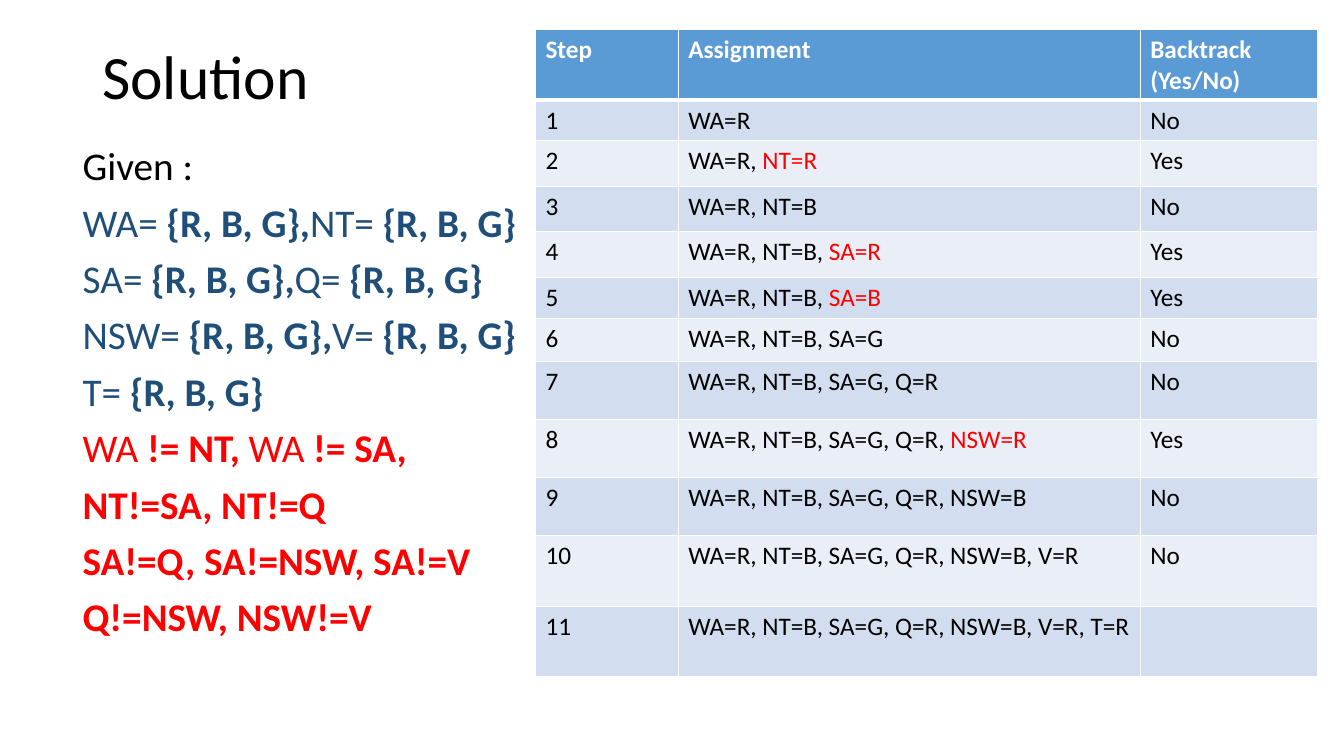
"""Build a slide that solves a map colouring problem by backtracking."""
from lxml import etree
from pptx import Presentation
from pptx.dml.color import RGBColor
from pptx.enum import text as t
from pptx.oxml import ns
from pptx.util import Pt

BLACK = RGBColor(0x00, 0x00, 0x00)
WHITE = RGBColor(0xFF, 0xFF, 0xFF)
RED = RGBColor(0xFF, 0x00, 0x00)
NAVY = RGBColor(0x1F, 0x4E, 0x79)
HEADER_BLUE = RGBColor(0x5B, 0x9B, 0xD5)
BAND_DARK = RGBColor(0xD2, 0xDE, 0xEF)
BAND_LIGHT = RGBColor(0xEA, 0xEF, 0xF7)

DOMAINS = [
    "WA= *{R, B, G},*NT= *{R, B, G}",
    "SA= *{R, B, G},*Q= *{R, B, G}",
    "NSW= *{R, B, G},*V= *{R, B, G}",
    "T= *{R, B, G}",
]
CONSTRAINTS = [
    "WA* != NT, *WA* != SA,",
    "*NT!=SA, NT!=Q",
    "*SA!=Q, SA!=NSW, SA!=V",
    "*Q!=NSW, NSW!=V",
]
HEADINGS = ("Step", "Assignment", "Backtrack (Yes/No)")
STEPS = [
    ("WA=R", "No"),
    ("WA=R, *NT=R", "Yes"),
    ("WA=R, NT=B", "No"),
    ("WA=R, NT=B, *SA=R", "Yes"),
    ("WA=R, NT=B, *SA=B", "Yes"),
    ("WA=R, NT=B, SA=G", "No"),
    ("WA=R, NT=B, SA=G, Q=R", "No"),
    ("WA=R, NT=B, SA=G, Q=R, *NSW=R", "Yes"),
    ("WA=R, NT=B, SA=G, Q=R, NSW=B", "No"),
    ("WA=R, NT=B, SA=G, Q=R, NSW=B, V=R", "No"),
    ("WA=R, NT=B, SA=G, Q=R, NSW=B, V=R, T=R", ""),
]
COLUMN_SHARES = (102, 330, 127)
ROW_SHARES = (50, 29.2, 32.5, 32.5, 32.5, 29.2, 31.3, 41.3, 41.3, 41.3, 51, 50)


def write(paragraph, content, size=18, color=BLACK, bold=False,
          marked_color=None, marked_bold=None, spacing=None, before=None):
    """Fill a paragraph, giving the parts between asterisks the marked format."""
    if spacing:
        paragraph.line_spacing = spacing
    if before is not None:
        paragraph.space_before = Pt(before)
    for index, part in enumerate(content.split("*")):
        if not part:
            continue
        marked = index % 2 == 1
        run = paragraph.add_run()
        run.text = part
        font = run.font
        font.name = "Calibri"
        font.size = Pt(size)
        font.bold = marked_bold if marked and marked_bold is not None else bold
        font.color.rgb = marked_color if marked and marked_color else color


def add_text_frame(slide, box, anchor):
    """Add a wrapping text box and return its frame."""
    frame = slide.shapes.add_textbox(*map(Pt, box)).text_frame
    frame.word_wrap = True
    frame.vertical_anchor = anchor
    return frame


def add_title(slide, box):
    """Add the slide title."""
    frame = add_text_frame(slide, box, t.MSO_ANCHOR.MIDDLE)
    write(frame.paragraphs[0], "Solution", size=44, spacing=0.9)


def add_problem(slide, box):
    """Add the list of domains and constraints."""
    frame = add_text_frame(slide, box, t.MSO_ANCHOR.TOP)
    lines = [("Given :", BLACK)]
    lines += [(line, NAVY) for line in DOMAINS]
    lines += [(line, RED) for line in CONSTRAINTS]
    for index, (line, color) in enumerate(lines):
        paragraph = frame.add_paragraph() if index else frame.paragraphs[0]
        write(paragraph, line, size=28, color=color, marked_bold=True,
              spacing=0.9, before=10)


def set_borders(cell, widths):
    """Draw white cell borders, with widths in points by side."""
    properties = cell._tc.get_or_add_tcPr()
    for side, width in widths.items():
        line = etree.SubElement(properties, ns.qn(f"a:ln{side}"), w=str(Pt(width)))
        fill = etree.SubElement(line, ns.qn("a:solidFill"))
        etree.SubElement(fill, ns.qn("a:srgbClr"), val=str(WHITE))


def add_steps_table(slide, box):
    """Add the table of search steps, sharing the box among rows and columns."""
    left, top, width, height = box
    rows = [HEADINGS] + [(str(number), *step) for number, step in enumerate(STEPS, 1)]
    table = slide.shapes.add_table(len(rows), len(HEADINGS), *map(Pt, box)).table
    for column, share in zip(table.columns, COLUMN_SHARES):
        column.width = Pt(width * share / sum(COLUMN_SHARES))
    for row, share in zip(table.rows, ROW_SHARES):
        row.height = Pt(height * share / sum(ROW_SHARES))
    for row_index, contents in enumerate(rows):
        header = row_index == 0
        band = BAND_DARK if row_index % 2 else BAND_LIGHT
        for column_index, content in enumerate(contents):
            cell = table.cell(row_index, column_index)
            set_borders(cell, {"L": 1, "R": 1, "T": 3 if row_index == 1 else 1,
                               "B": 3 if header else 1})
            cell.fill.solid()
            cell.fill.fore_color.rgb = HEADER_BLUE if header else band
            write(cell.text_frame.paragraphs[0], content, bold=header,
                  color=WHITE if header else BLACK, marked_color=RED)


def main():
    """Build and save the presentation."""
    presentation = Presentation()
    presentation.slide_width = Pt(960)
    presentation.slide_height = Pt(540)
    slide = presentation.slides.add_slide(presentation.slide_layouts[6])
    add_title(slide, (66, 29, 828, 55.5))
    add_problem(slide, (52, 101.5, 842, 385))
    add_steps_table(slide, (382.5, 21, 559, 462))
    presentation.save("out.pptx")


if __name__ == "__main__":
    main()
